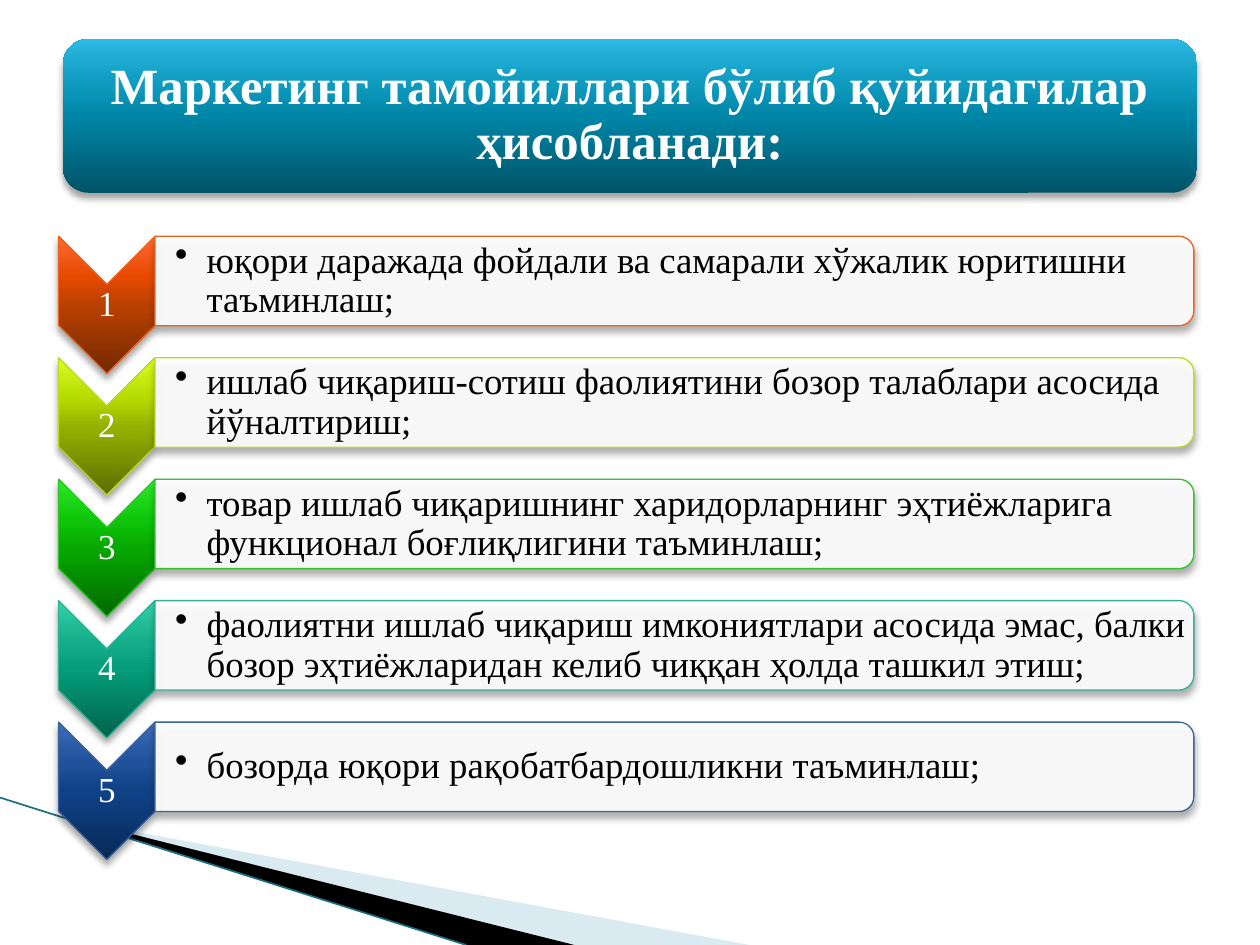
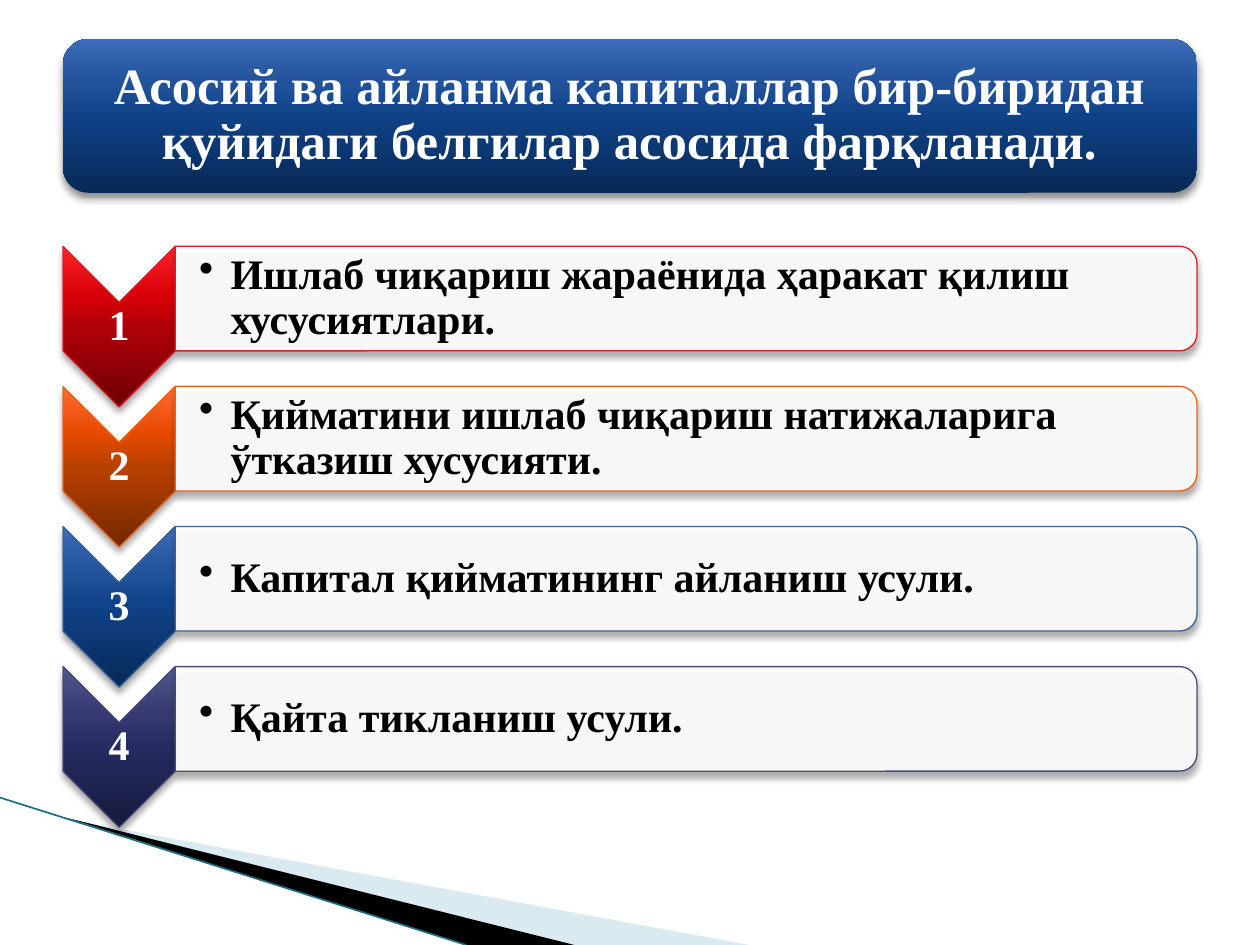
from collections import namedtuple

from pptx import Presentation
from pptx.dml.color import RGBColor
from pptx.enum.shapes import MSO_CONNECTOR, MSO_SHAPE
from pptx.enum.text import MSO_ANCHOR, MSO_AUTO_SIZE, PP_ALIGN
from pptx.oxml import parse_xml
from pptx.oxml.ns import nsdecls, qn
from pptx.oxml.xmlchemy import OxmlElement
from pptx.util import Inches, Pt

COLUMNS, ROWS = 100, 75
FONT = "Times New Roman"
STOPS = (0, 50, 70, 100)

WHITE = RGBColor(0xFF, 0xFF, 0xFF)
BLACK = RGBColor(0x00, 0x00, 0x00)
PALE_BLUE = RGBColor(0xA0, 0xCB, 0xDC)
DARK_TEAL = RGBColor(0x1B, 0x6E, 0x84)

Accent = namedtuple("Accent", "line shades")
Layout = namedtuple("Layout", "left top right arrow_width arrow_height bar_height pitch inset margin")


def accent(line, *shades):
    return Accent(RGBColor.from_string(line), [RGBColor.from_string(shade) for shade in shades])


RED = accent("DA1F28", "6D0005", "B00008", "DA0008", "FF2429")
ORANGE = accent("EB641B", "732800", "B94100", "E64900", "FF6933")
LIME = accent("BDDA20", "5C6E00", "95B100", "B6DA00", "D6FF24")
GREEN = accent("2FC529", "046800", "06A800", "0FC509", "2CEA28")
TEAL = accent("32B094", "00634D", "049C79", "15AE8A", "33D1A8")
BLUE = accent("39639D", "072956", "104288", "205199", "3D6BB9")
INDIGO = accent("474B78", "171A3D", "262B61", "353970", "51568D")
CYAN = accent("2CB9E3", "005367", "0086A7", "0E9ABE", "2CB9E3")

FIVE_ROWS = Layout(4.65, 18.75, 94.75, 7.65, 10.9, 7.1, 9.64, 0.16, 0.01)
FOUR_ROWS = Layout(5, 19.55, 95, 8.9, 12.75, 8.3, 11.12, 0.19, 0.02)


def add_bullet(paragraph):
    properties = paragraph._p.get_or_add_pPr()
    properties.set("marL", str(Inches(0.25)))
    properties.set("indent", str(-Inches(0.25)))
    bullet = OxmlElement("a:buChar")
    bullet.set("char", "•")
    properties.append(bullet)


def write_text(shape, text, size, color=BLACK, bold=False, align=PP_ALIGN.LEFT,
               insets=(0.01, 0.01, 0.01, 0.01), bullet=False):
    frame = shape.text_frame
    frame.word_wrap = True
    frame.auto_size = MSO_AUTO_SIZE.NONE
    frame.vertical_anchor = MSO_ANCHOR.MIDDLE
    (frame.margin_left, frame.margin_top,
     frame.margin_right, frame.margin_bottom) = map(Inches, insets)
    paragraph = frame.paragraphs[0]
    paragraph.alignment = align
    paragraph.line_spacing = 0.9
    if bullet:
        add_bullet(paragraph)
    run = paragraph.add_run()
    run.text = text
    run.font.name = FONT
    run.font.size = Pt(size)
    run.font.bold = bold
    run.font.color.rgb = color


class Deck:
    def __init__(self):
        self.presentation = Presentation()
        self.presentation.slide_width = Inches(10)
        self.presentation.slide_height = Inches(7.5)
        self.slide = None

    def x(self, columns):
        return round(self.presentation.slide_width * columns / COLUMNS)

    def y(self, rows):
        return round(self.presentation.slide_height * rows / ROWS)

    def box(self, left, top, width, height):
        return self.x(left), self.y(top), self.x(width), self.y(height)

    def new_slide(self):
        self.slide = self.presentation.slides.add_slide(self.presentation.slide_layouts[5])
        self.wedge([(5.5, 65.05), (59.5, 75), (45.5, 75)], PALE_BLUE, 40)
        self.wedge([(5.3, 64.9), (45.6, 75), (37, 75)], BLACK)
        self.line((0, 63.3), (37, 75), DARK_TEAL, 0.95)

    def paint(self, shape, color, opacity=100):
        shape.fill.solid()
        shape.fill.fore_color.rgb = color
        if opacity < 100:
            alpha = OxmlElement("a:alpha")
            alpha.set("val", str(opacity * 1000))
            shape.element.spPr.find(".//" + qn("a:srgbClr")).append(alpha)

    def paint_gradient(self, shape, shades):
        stops = "".join(
            f'<a:gs pos="{stop * 1000}"><a:srgbClr val="{shade}"/></a:gs>'
            for stop, shade in zip(STOPS, shades))
        gradient = parse_xml(
            f'<a:gradFill {nsdecls("a")} rotWithShape="0"><a:gsLst>{stops}</a:gsLst>'
            '<a:lin ang="16200000" scaled="0"/></a:gradFill>')
        shape.fill.background()
        properties = shape.element.spPr
        properties.replace(properties.find(qn("a:noFill")), gradient)

    def cast_shadow(self, shape, opacity=35, blur=4):
        shape.shadow.inherit = False
        shape.element.spPr.find(qn("a:effectLst")).append(parse_xml(
            f'<a:outerShdw {nsdecls("a")} blurRad="{Pt(blur)}" dist="{Pt(3)}" dir="5400000" '
            f'rotWithShape="0"><a:srgbClr val="{BLACK}"><a:alpha val="{opacity * 1000}"/>'
            '</a:srgbClr></a:outerShdw>'))

    def outline(self, shape, color):
        shape.line.color.rgb = color
        shape.line.width = Pt(0.75)

    def wedge(self, points, color, opacity=100):
        corners = [(self.x(column), self.y(row)) for column, row in points]
        builder = self.slide.shapes.build_freeform(*corners[0])
        builder.add_line_segments(corners[1:])
        shape = builder.convert_to_shape()
        shape.shadow.inherit = False
        self.paint(shape, color, opacity)
        shape.line.fill.background()

    def line(self, start, end, color, width):
        connector = self.slide.shapes.add_connector(
            MSO_CONNECTOR.STRAIGHT, self.x(start[0]), self.y(start[1]), self.x(end[0]), self.y(end[1]))
        connector.line.color.rgb = color
        connector.line.width = Pt(width)
        connector.element.spPr.append(OxmlElement("a:effectLst"))

    def turned_shape(self, kind, left, top, width, height):
        shift = (width - height) / 2
        shape = self.slide.shapes.add_shape(
            kind, *self.box(left + shift, top - shift, height, width))
        shape.rotation = 90
        return shape

    def text_box(self, box, text, **text_format):
        write_text(self.slide.shapes.add_textbox(*self.box(*box)), text, **text_format)

    def title(self, text, shades, **shadow):
        band = self.slide.shapes.add_shape(
            MSO_SHAPE.ROUNDED_RECTANGLE, *self.box(5, 3.1, 90, 12.2))
        self.paint_gradient(band, shades)
        band.line.fill.background()
        self.cast_shadow(band, **shadow)
        title = self.slide.shapes.title
        title.left, title.top, title.width, title.height = self.box(5.6, 3.7, 88.8, 11)
        write_text(title, text, size=29, color=WHITE, bold=True,
                   align=PP_ALIGN.CENTER, insets=(0.12,) * 4)
        self.slide.shapes.element.append(title.element)

    def numbered_row(self, number, text, colors, layout, number_size, text_size, bold):
        top = layout.top + (number - 1) * layout.pitch
        bar_left = layout.left + layout.arrow_width
        bar_width = layout.right - bar_left
        margin = layout.margin

        arrow = self.turned_shape(
            MSO_SHAPE.CHEVRON, layout.left, top, layout.arrow_width, layout.arrow_height)
        self.paint_gradient(arrow, colors.shades)
        bar = self.turned_shape(
            MSO_SHAPE.ROUND_2_SAME_RECTANGLE, bar_left, top, bar_width, layout.bar_height)
        self.paint(bar, WHITE, 90)
        for shape in (arrow, bar):
            self.outline(shape, colors.line)
            self.cast_shadow(shape)

        self.text_box((layout.left, top, layout.arrow_width, layout.arrow_height), str(number),
                      size=number_size, color=WHITE, bold=bold,
                      align=PP_ALIGN.CENTER, insets=(margin,) * 4)
        self.text_box((bar_left, top, bar_width - 0.4, layout.bar_height), text,
                      size=text_size, bold=bold, bullet=True,
                      insets=(layout.inset, margin, margin, margin))

    def numbered_list(self, rows, layout, **text_format):
        for number, (text, colors) in enumerate(rows, 1):
            self.numbered_row(number, text, colors, layout, **text_format)


def main():
    deck = Deck()

    deck.new_slide()
    deck.numbered_list([
        ("юқори даражада фойдали ва самарали хўжалик юритишни таъминлаш;", ORANGE),
        ("ишлаб чиқариш-сотиш фаолиятини бозор талаблари асосида йўналтириш;", LIME),
        ("товар ишлаб чиқаришнинг харидорларнинг эҳтиёжларига функционал "
         "боғлиқлигини таъминлаш;", GREEN),
        ("фаолиятни ишлаб чиқариш имкониятлари асосида эмас, балки бозор "
         "эҳтиёжларидан келиб чиққан ҳолда ташкил этиш;", TEAL),
        ("бозорда юқори рақобатбардошликни таъминлаш;", BLUE),
    ], FIVE_ROWS, number_size=20, text_size=21, bold=False)
    deck.title("Маркетинг тамойиллари бўлиб қуйидагилар ҳисобланади:", CYAN.shades)

    deck.new_slide()
    deck.numbered_list([
        ("Ишлаб чиқариш жараёнида ҳаракат қилиш хусусиятлари.", RED),
        ("Қийматини ишлаб чиқариш натижаларига ўтказиш хусусияти.", ORANGE),
        ("Капитал қийматининг айланиш усули.", BLUE),
        ("Қайта тикланиш усули.", INDIGO),
    ], FOUR_ROWS, number_size=24, text_size=24, bold=True)
    deck.title("Асосий ва айланма капиталлар бир-биридан қуйидаги белгилар асосида фарқланади.",
               BLUE.shades, opacity=45, blur=5)

    deck.presentation.save("out.pptx")


if __name__ == "__main__":
    main()
